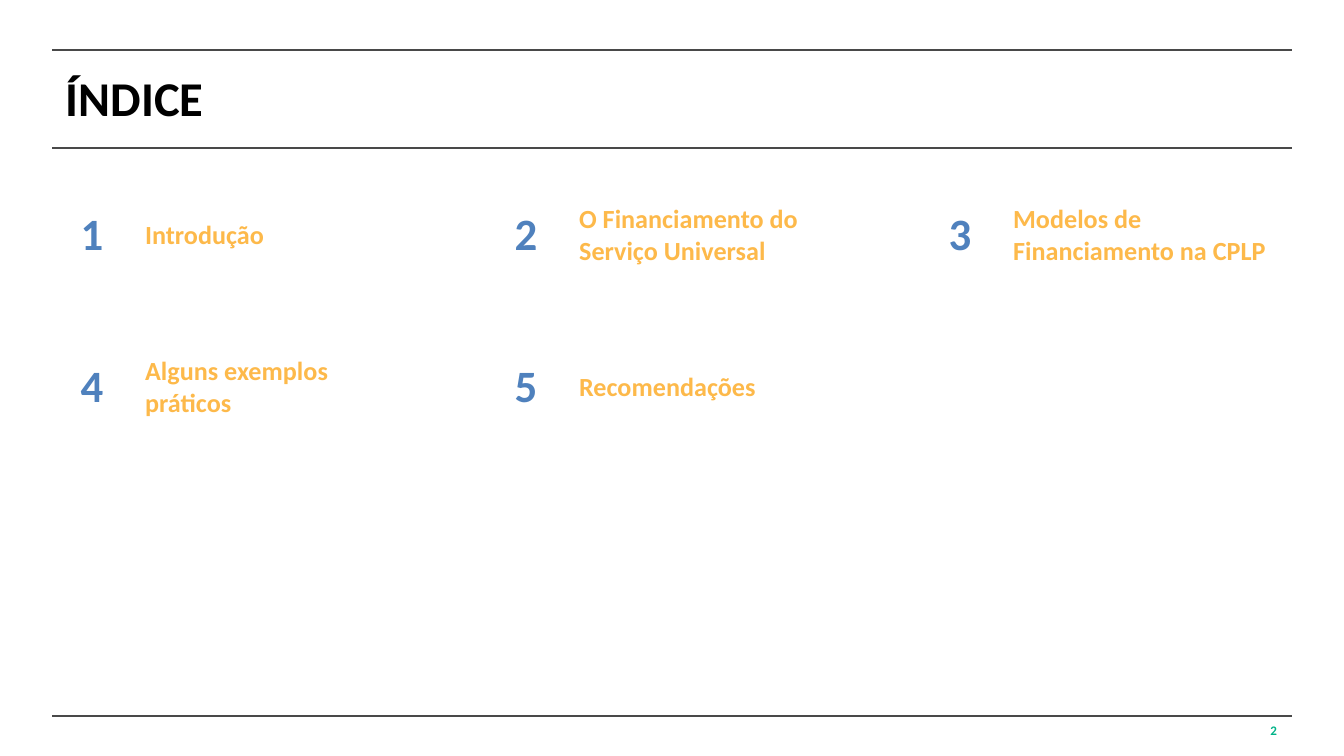
"""Build the table-of-contents slide."""
from dataclasses import dataclass
from typing import Any

from lxml import etree
from pptx import Presentation
from pptx.dml.color import RGBColor
from pptx.enum.shapes import MSO_CONNECTOR
from pptx.enum.text import MSO_ANCHOR, PP_ALIGN
from pptx.oxml.ns import qn
from pptx.util import Inches, Pt

STRAIGHT = MSO_CONNECTOR.STRAIGHT
TOP, MIDDLE = MSO_ANCHOR.TOP, MSO_ANCHOR.MIDDLE
LEFT, CENTER, RIGHT = PP_ALIGN.LEFT, PP_ALIGN.CENTER, PP_ALIGN.RIGHT


@dataclass(frozen=True)
class TextStyle:
    size: float
    color: str
    align: Any = LEFT


@dataclass(frozen=True)
class Theme:
    font: str = "Calibri"
    rule: str = "494949"
    rule_width: float = 1
    paper: str = "FFFFFF"
    title: TextStyle = TextStyle(26, "000000")
    number: TextStyle = TextStyle(24, "4F81BD", CENTER)
    topic: TextStyle = TextStyle(14, "FDB94A")
    page: TextStyle = TextStyle(7, "00B388", RIGHT)


@dataclass(frozen=True)
class Box:
    left: float
    top: float
    width: float
    height: float


THEME = Theme()
SLIDE_WIDTH = 10
SLIDE_HEIGHT = SLIDE_WIDTH * 9 / 16
MARGIN = 0.39
RULE_TOPS = (0.37, 1.1, 5.33)
TITLE_BOX = Box(MARGIN, 0.37, 9.21, 0.71)
PAGE_BOX = Box(7.27, 5.33, 2.33, 0.2)
TABLE_BOX = Box(MARGIN, 1.4, 9.21, 3.06)
COLUMN_WIDTHS = (0.59, 2.17, 0.47, 0.59, 2.17, 0.47, 0.59, 2.17)
ROW_HEIGHTS = (0.7, 0.39, 0.79, 0.39, 0.79)
TOPICS_PER_ROW, COLUMN_STEP, ROW_STEP = 3, 3, 2
TOPICS = (
    "Introdução",
    "O Financiamento do Serviço Universal",
    "Modelos de Financiamento na CPLP",
    "Alguns exemplos práticos",
    "Recomendações",
)


def write(tf: Any, text: str, style: TextStyle) -> None:
    p = tf.paragraphs[0]
    p.alignment = style.align
    r = p.add_run()
    r.text = text
    r.font.name = THEME.font
    r.font.size = Pt(style.size)
    r.font.bold = True
    r.font.color.rgb = RGBColor.from_string(style.color)


def add_rule(s: Any, top: float) -> None:
    line = s.shapes.add_connector(
        STRAIGHT, Inches(MARGIN), Inches(top), Inches(SLIDE_WIDTH - MARGIN), Inches(top))
    line.line.color.rgb = RGBColor.from_string(THEME.rule)
    line.line.width = Pt(THEME.rule_width)
    etree.SubElement(line._element.spPr, qn("a:effectLst"))


def add_text(s: Any, box: Box, text: str, style: TextStyle, anchor: Any) -> None:
    sp = s.shapes.add_textbox(
        Inches(box.left), Inches(box.top), Inches(box.width), Inches(box.height))
    tf = sp.text_frame
    tf.word_wrap = True
    tf.vertical_anchor = anchor
    write(tf, text, style)


def add_index(s: Any, box: Box) -> None:
    table = s.shapes.add_table(
        len(ROW_HEIGHTS), len(COLUMN_WIDTHS),
        Inches(box.left), Inches(box.top), Inches(box.width), Inches(box.height)).table
    table.first_row = False
    table.horz_banding = False
    for column, width in zip(table.columns, COLUMN_WIDTHS):
        column.width = Inches(width)
    for row, height in zip(table.rows, ROW_HEIGHTS):
        row.height = Inches(height)
    for cell in table.iter_cells():
        cell.fill.solid()
        cell.fill.fore_color.rgb = RGBColor.from_string(THEME.paper)
        cell.vertical_anchor = MIDDLE
        cell.margin_top = cell.margin_bottom = Inches(0)
    for i, topic in enumerate(TOPICS):
        row, column = divmod(i, TOPICS_PER_ROW)
        row, column = row * ROW_STEP, column * COLUMN_STEP
        write(table.cell(row, column).text_frame, str(i + 1), THEME.number)
        write(table.cell(row, column + 1).text_frame, topic, THEME.topic)


def main() -> None:
    prs = Presentation()
    prs.slide_width, prs.slide_height = Inches(SLIDE_WIDTH), Inches(SLIDE_HEIGHT)
    s = prs.slides.add_slide(prs.slide_layouts[6])
    for top in RULE_TOPS:
        add_rule(s, top)
    add_text(s, TITLE_BOX, "ÍNDICE", THEME.title, MIDDLE)
    add_text(s, PAGE_BOX, "2", THEME.page, TOP)
    add_index(s, TABLE_BOX)
    prs.save("out.pptx")


if __name__ == "__main__":
    main()
